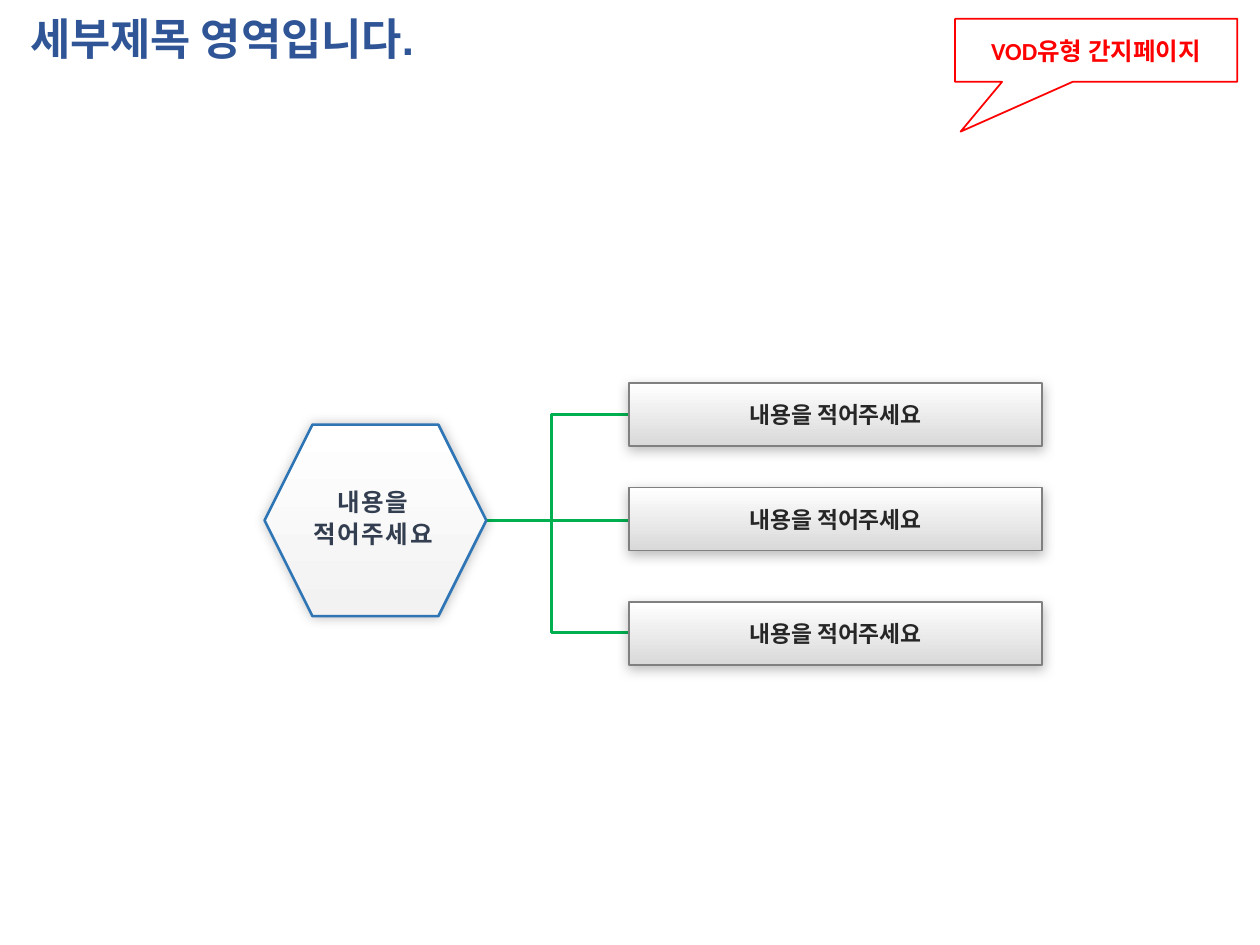
from lxml.etree import SubElement
from pptx import Presentation
from pptx.dml.color import RGBColor
from pptx.enum.shapes import MSO_CONNECTOR as CONNECTOR, MSO_SHAPE as SHAPE
from pptx.enum.text import MSO_ANCHOR as ANCHOR, PP_ALIGN as ALIGN
from pptx.oxml.ns import qn
from pptx.util import Inches, Pt

COLORS = {
    "title": "2F5597", "branch": "00B050", "white": "FFFFFF",
    "hexagon_end": "F2F2F2", "hexagon_line": "2E75B6", "hexagon_text": "333F50",
    "box_end": "D9D9D9", "box_line": "808080", "box_text": "262626",
    "callout": "FF0000", "shadow": "000000",
}
KOREAN_FONT = "Noto Sans CJK KR"


def color(name):
    return RGBColor.from_string(COLORS[name])


def set_text(shape, lines, size, color_name, font=KOREAN_FONT, align=ALIGN.CENTER,
             anchor=ANCHOR.MIDDLE, line_spacing=None, letter_spacing=None):
    frame = shape.text_frame
    frame.word_wrap = True
    frame.vertical_anchor = anchor
    frame.text = "\n".join(lines)
    for paragraph in frame.paragraphs:
        paragraph.alignment = align
        paragraph.line_spacing = line_spacing
        run = paragraph.runs[0]
        run.font.size = Pt(size)
        run.font.bold = True
        run.font.name = font
        run.font.color.rgb = color(color_name)
        properties = run.font._element
        SubElement(properties, qn("a:ea"), typeface=KOREAN_FONT)
        if letter_spacing:
            properties.set("spc", str(letter_spacing * 100))


def add_shadow(shape, distance):
    """Add a soft shadow that falls straight down by distance points."""
    effects = shape._element.spPr.find(qn("a:effectLst"))
    shadow = SubElement(effects, qn("a:outerShdw"), blurRad=str(Pt(7)), dist=str(Pt(distance)),
                        dir="5400000" if distance else "0", algn="ctr", rotWithShape="0")
    shade = SubElement(shadow, qn("a:srgbClr"), val=COLORS["shadow"])
    SubElement(shade, qn("a:alpha"), val="25000")


def add_shape(slide, kind, left, top, width, height, line, line_width):
    shape = slide.shapes.add_shape(kind, Inches(left), Inches(top), Inches(width), Inches(height))
    shape.shadow.inherit = False
    shape.line.color.rgb = color(line)
    shape.line.width = Pt(line_width)
    return shape


def fill_gradient(shape, end):
    """Fade from white at the top to the end colour at the bottom."""
    shape.fill.gradient()
    shape.fill.gradient_angle = 270
    for stop, name in zip(shape.fill.gradient_stops, ("white", end)):
        stop.color.rgb = color(name)


def add_branch(slide, kind, start, end):
    branch = slide.shapes.add_connector(kind, *map(Inches, start + end))
    branch.line.color.rgb = color("branch")
    branch.line.width = Pt(1.5)
    SubElement(branch._element.spPr, qn("a:effectLst"))


def add_title(slide, text):
    title = slide.shapes.title
    title.left, title.top = Inches(0.14), Inches(0.08)
    title.width, title.height = Inches(7.57), Inches(0.49)
    set_text(title, [text], 25, "title", font="Arial", align=ALIGN.LEFT, line_spacing=0.9)


def add_hexagon(slide, lines):
    hexagon = add_shape(slide, SHAPE.HEXAGON, 2.1, 3.37, 1.76, 1.52, "hexagon_line", 1.5)
    fill_gradient(hexagon, "hexagon_end")
    add_shadow(hexagon, 0)
    label = slide.shapes.add_textbox(Inches(2.1), Inches(3.8), Inches(1.72), Inches(0.61))
    set_text(label, lines, 14, "hexagon_text", anchor=ANCHOR.TOP,
             line_spacing=Pt(18), letter_spacing=1)


def add_box(slide, top, text):
    box = add_shape(slide, SHAPE.RECTANGLE, 4.99, top, 3.28, 0.5, "box_line", 1)
    fill_gradient(box, "box_end")
    add_shadow(box, 2)
    set_text(box, [text], 13, "box_text")


def add_callout(slide, text):
    callout = add_shape(slide, SHAPE.RECTANGULAR_CALLOUT, 7.58, 0.15, 2.24, 0.5, "callout", 1)
    callout.adjustments[0] = -0.48
    callout.adjustments[1] = 1.29
    callout.fill.solid()
    callout.fill.fore_color.rgb = color("white")
    set_text(callout, [text], 14, "callout", font="Calibri")


def main():
    presentation = Presentation()
    presentation.slide_width, presentation.slide_height = Inches(10), Inches(7.5)
    slide = presentation.slides.add_slide(presentation.slide_layouts[5])

    add_title(slide, "세부제목 영역입니다.")
    for end_y in (5.02, 3.29):
        add_branch(slide, CONNECTOR.ELBOW, (3.48, 4.13), (5.27, end_y))
    add_branch(slide, CONNECTOR.STRAIGHT, (3.66, 4.13), (5.3, 4.13))
    add_hexagon(slide, ["내용을", "적어주세요"])
    for top in (3.04, 3.87, 4.78):
        add_box(slide, top, "내용을 적어주세요")
    add_callout(slide, "VOD유형 간지페이지")

    presentation.save("out.pptx")


if __name__ == "__main__":
    main()
